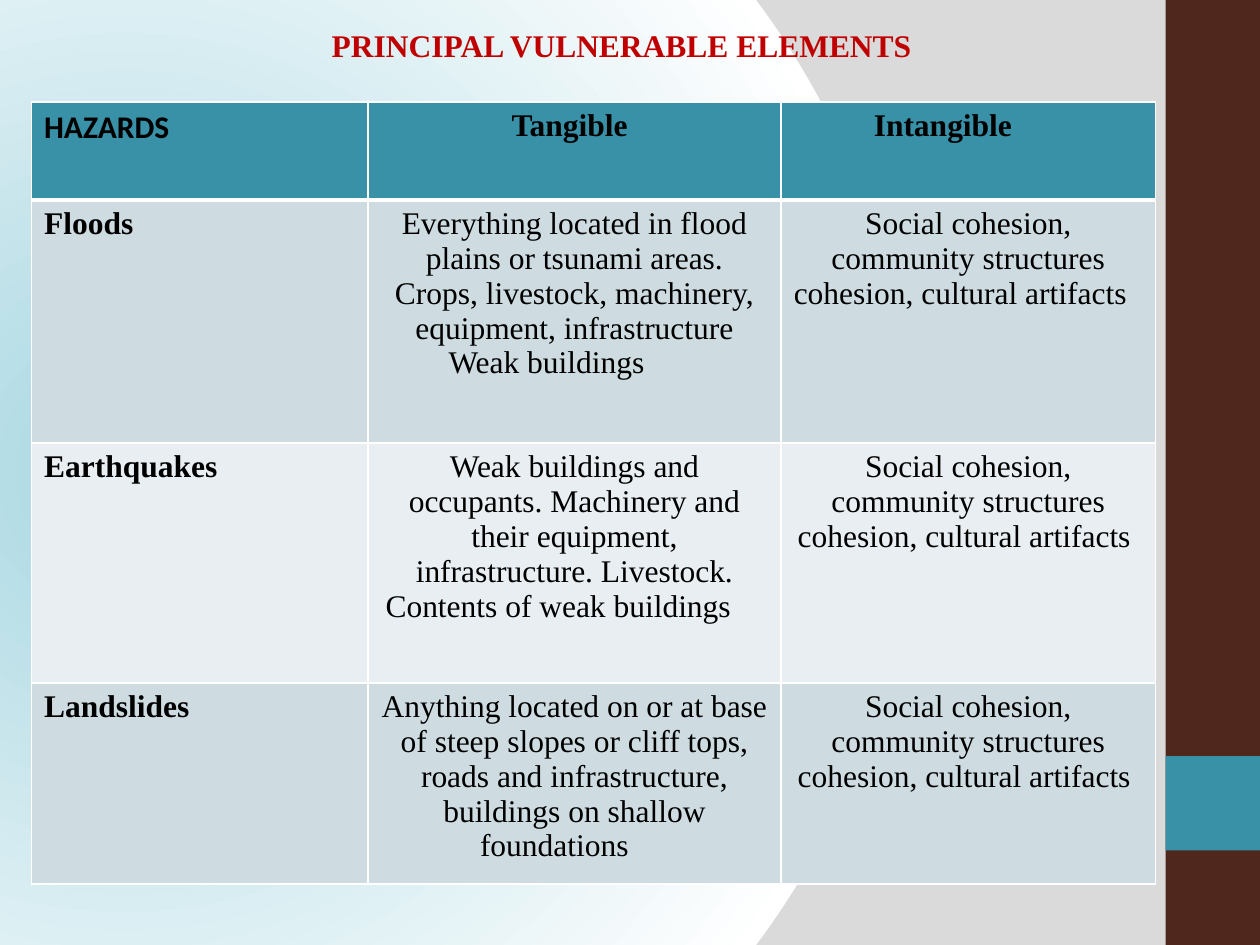
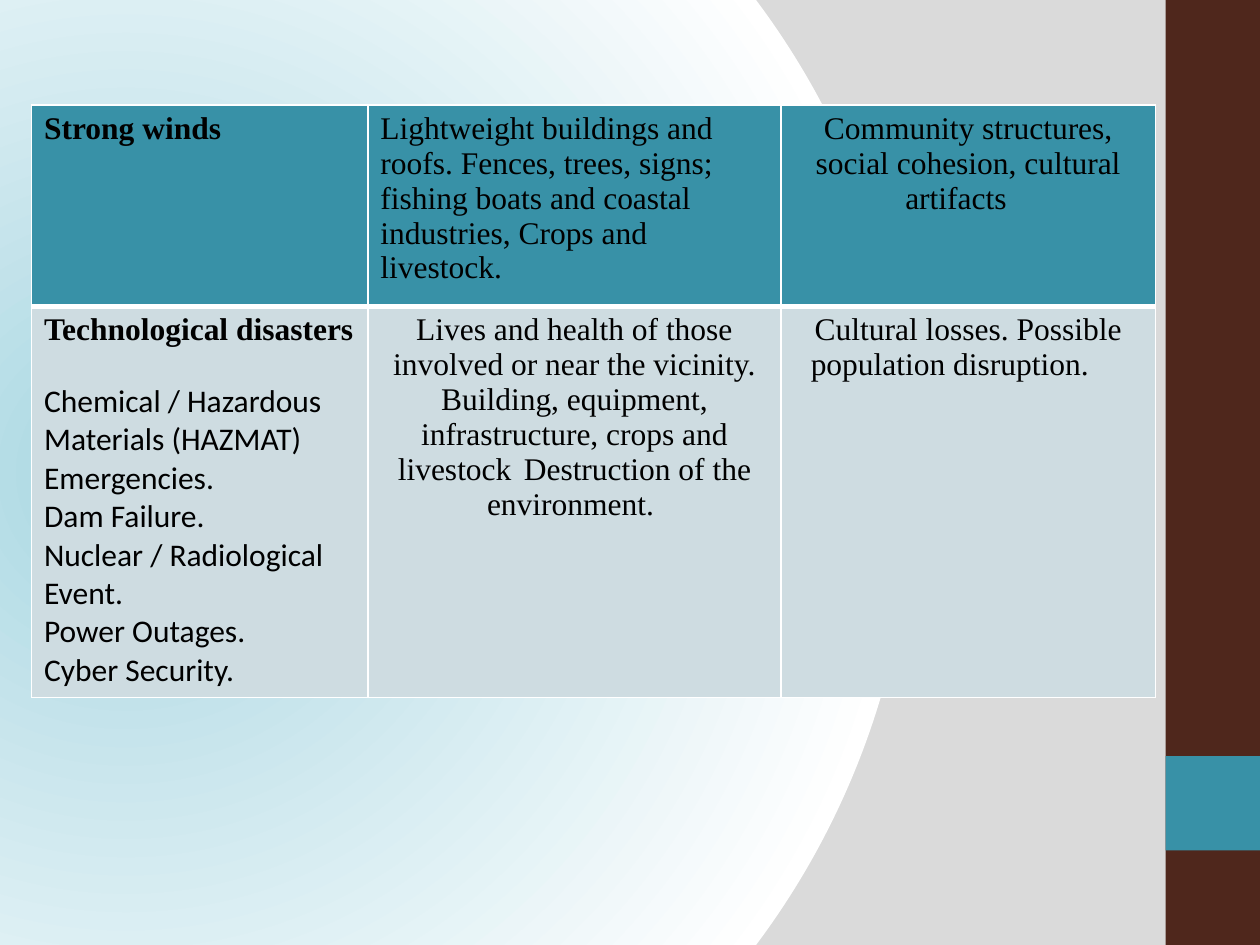
import dataclasses

import pptx
import pptx.dml.color
import pptx.enum.shapes
import pptx.enum.text
import pptx.oxml
import pptx.oxml.ns
import pptx.util

Pt = pptx.util.Pt
RGBColor = pptx.dml.color.RGBColor
ALIGN = pptx.enum.text.PP_ALIGN

BROWN = RGBColor(0x4F, 0x27, 0x1C)
TEAL = RGBColor(0x38, 0x91, 0xA7)
PALE_TEAL = RGBColor(0xA9, 0xD7, 0xE2)
BLUE_GREY = RGBColor(0xCE, 0xDC, 0xE1)
LIGHT_GREY = RGBColor(0xE8, 0xEE, 0xF1)
BACKDROP_GREY = RGBColor(0xDA, 0xDA, 0xDA)
WHITE = RGBColor(0xFF, 0xFF, 0xFF)
BLACK = RGBColor(0, 0, 0)
RED = RGBColor(0xC0, 0, 0)

SERIF = "Times New Roman"
SANS = "Calibri"
TEXT_SIZE = Pt(18)
COLUMN_WIDTHS = (192.24, 236.16, 213.84)
TABLE_LEFT = 18
TITLE_ONLY, BLANK = 5, 6


@dataclasses.dataclass
class Entry:
    text: str
    align: ALIGN = ALIGN.CENTER
    bold: bool = False
    font: str = SERIF
    details: tuple = ()


def hazard(text, **style):
    return Entry(text, ALIGN.LEFT, True, **style)


class Deck:
    def __init__(self):
        self.show = pptx.Presentation()
        self.show.slide_width, self.show.slide_height = Pt(720), Pt(540)
        self.slide = None
        self.backdrop()

    def backdrop(self):
        master = self.show.slide_master
        master.background.fill.solid()
        solid = master.element.find(".//" + pptx.oxml.ns.qn("p:bgPr"))[0]
        stops = "".join(
            f'<a:gs pos="{position}"><a:srgbClr val="{color}"/></a:gs>'
            for position, color in ((0, PALE_TEAL), (100000, WHITE), (100000, BACKDROP_GREY))
        )
        gradient = pptx.oxml.parse_xml(
            f'<a:gradFill {pptx.oxml.ns.nsdecls("a")} rotWithShape="1"><a:gsLst>{stops}</a:gsLst>'
            '<a:path path="circle"><a:fillToRect l="20000" t="50000" r="100000" b="50000"/></a:path>'
            "</a:gradFill>"
        )
        solid.getparent().replace(solid, gradient)

    def new_slide(self, layout):
        self.slide = self.show.slides.add_slide(self.show.slide_layouts[layout])
        self.band(0, 540, BROWN)
        self.band(432, 54, TEAL)

    def band(self, top, height, color):
        band = self.slide.shapes.add_shape(
            pptx.enum.shapes.MSO_SHAPE.RECTANGLE, Pt(666), Pt(top), Pt(54), Pt(height)
        )
        band.shadow.inherit = False
        band.fill.solid()
        band.fill.fore_color.rgb = color
        band.line.fill.background()

    def add_text(self, paragraph, text, align, color=BLACK, bold=False, font=SERIF):
        paragraph.alignment = align
        run = paragraph.add_run()
        run.text = text
        run.font.size, run.font.name = TEXT_SIZE, font
        run.font.bold, run.font.color.rgb = bold, color

    def title(self, text):
        title = self.slide.shapes.title
        title.left, title.top, title.width, title.height = Pt(171.4), Pt(11.5), Pt(372.2), Pt(51)
        frame = title.text_frame
        frame.auto_size = pptx.enum.text.MSO_AUTO_SIZE.NONE
        frame.vertical_anchor = pptx.enum.text.MSO_ANCHOR.TOP
        self.add_text(frame.paragraphs[0], text, ALIGN.CENTER, RED, True)

    def borders(self, cell, bottom):
        properties = cell._tc.get_or_add_tcPr()
        for index, (side, width) in enumerate((("L", 1), ("R", 1), ("T", 1), ("B", bottom))):
            properties.insert(index, pptx.oxml.parse_xml(
                f'<a:ln{side} {pptx.oxml.ns.nsdecls("a")} w="{int(Pt(width))}">'
                f'<a:solidFill><a:srgbClr val="{WHITE}"/></a:solidFill></a:ln{side}>'
            ))

    def table(self, top, heights, rows):
        table = self.slide.shapes.add_table(
            len(rows), len(COLUMN_WIDTHS), Pt(TABLE_LEFT), Pt(top),
            Pt(sum(COLUMN_WIDTHS)), Pt(sum(heights)),
        ).table
        for column, width in zip(table.columns, COLUMN_WIDTHS):
            column.width = Pt(width)
        for number, (row, height, entries) in enumerate(zip(table.rows, heights, rows)):
            row.height = Pt(height)
            stripe = BLUE_GREY if number % 2 else LIGHT_GREY
            for cell, entry in zip(row.cells, entries):
                cell.fill.solid()
                cell.fill.fore_color.rgb = stripe if number else TEAL
                self.borders(cell, 1 if number else 3)
                frame = cell.text_frame
                self.add_text(frame.paragraphs[0], entry.text, entry.align,
                              bold=entry.bold, font=entry.font)
                for detail in entry.details:
                    self.add_text(frame.add_paragraph(), detail, entry.align, font=SANS)


def main():
    deck = Deck()
    social_loss = "Social cohesion, community structures cohesion, cultural artifacts "

    deck.new_slide(TITLE_ONLY)
    deck.title("PRINCIPAL VULNERABLE ELEMENTS ")
    deck.table(58.3, (56, 139, 137, 115), (
        (hazard("HAZARDS", font=SANS),
         Entry("Tangible \t", bold=True),
         Entry("Intangible \t", bold=True)),
        (hazard("Floods \t"),
         Entry("Everything located in flood plains or tsunami areas. Crops, livestock, "
               "machinery, equipment, infrastructure Weak buildings \t"),
         Entry(social_loss + "\t")),
        (hazard("Earthquakes \t"),
         Entry("Weak buildings and occupants. Machinery and their equipment, "
               "infrastructure. Livestock. Contents of weak buildings \t"),
         Entry(social_loss)),
        (hazard("Landslides \t"),
         Entry("Anything located on or at base of steep slopes or cliff tops, roads and "
               "infrastructure, buildings on shallow foundations \t"),
         Entry(social_loss)),
    ))

    deck.new_slide(BLANK)
    deck.table(60, (115, 223.5), (
        (hazard("Strong winds \t"),
         Entry("Lightweight buildings and roofs. Fences, trees, signs; fishing boats and "
               "coastal industries, Crops and livestock. \t", ALIGN.LEFT),
         Entry("Community structures, social cohesion, cultural artifacts \t")),
        (hazard("Technological disasters \t", details=(
            "Chemical / Hazardous Materials (HAZMAT) Emergencies.",
            "Dam Failure.",
            "Nuclear / Radiological Event.",
            "Power Outages.",
            "Cyber Security.",
        )),
         Entry("Lives and health of those involved or near the vicinity. Building, equipment, "
               "infrastructure, crops and livestock \tDestruction of the environment. "),
         Entry("Cultural losses. Possible population disruption. \t")),
    ))

    deck.show.save("out.pptx")


if __name__ == "__main__":
    main()
